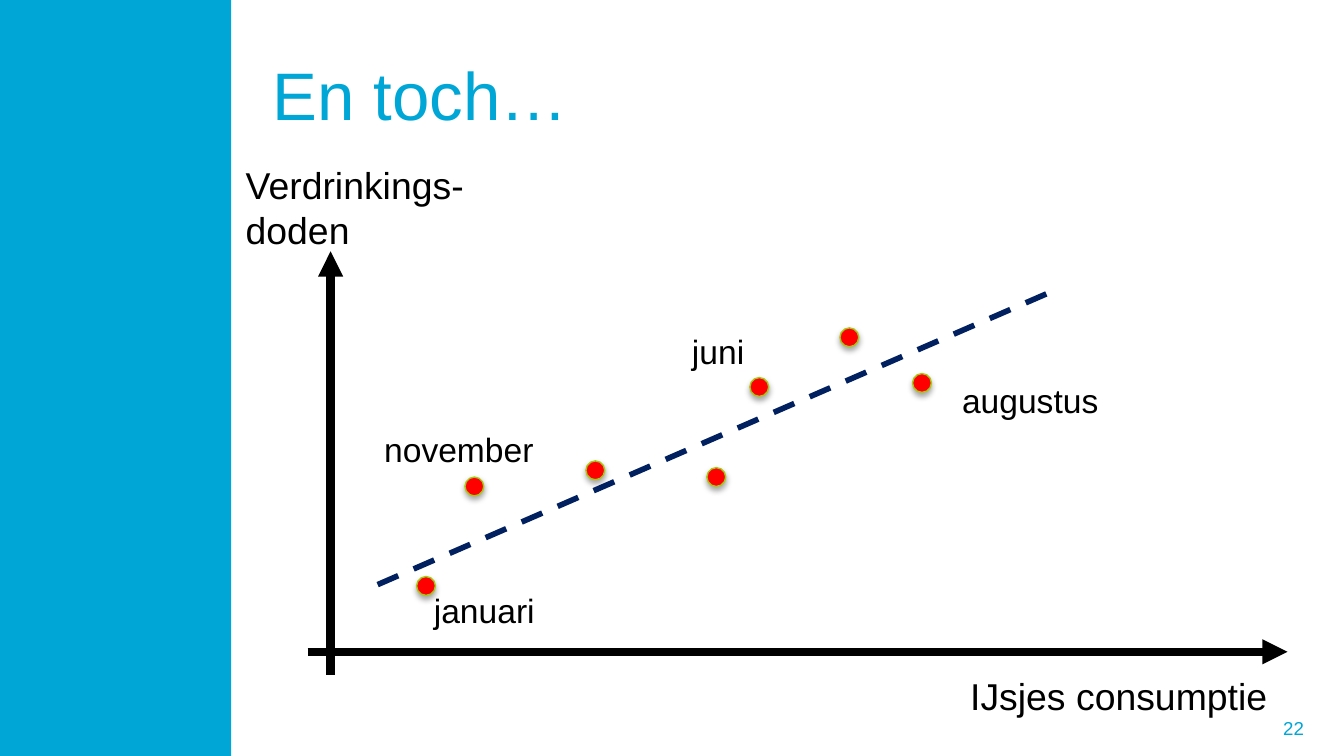
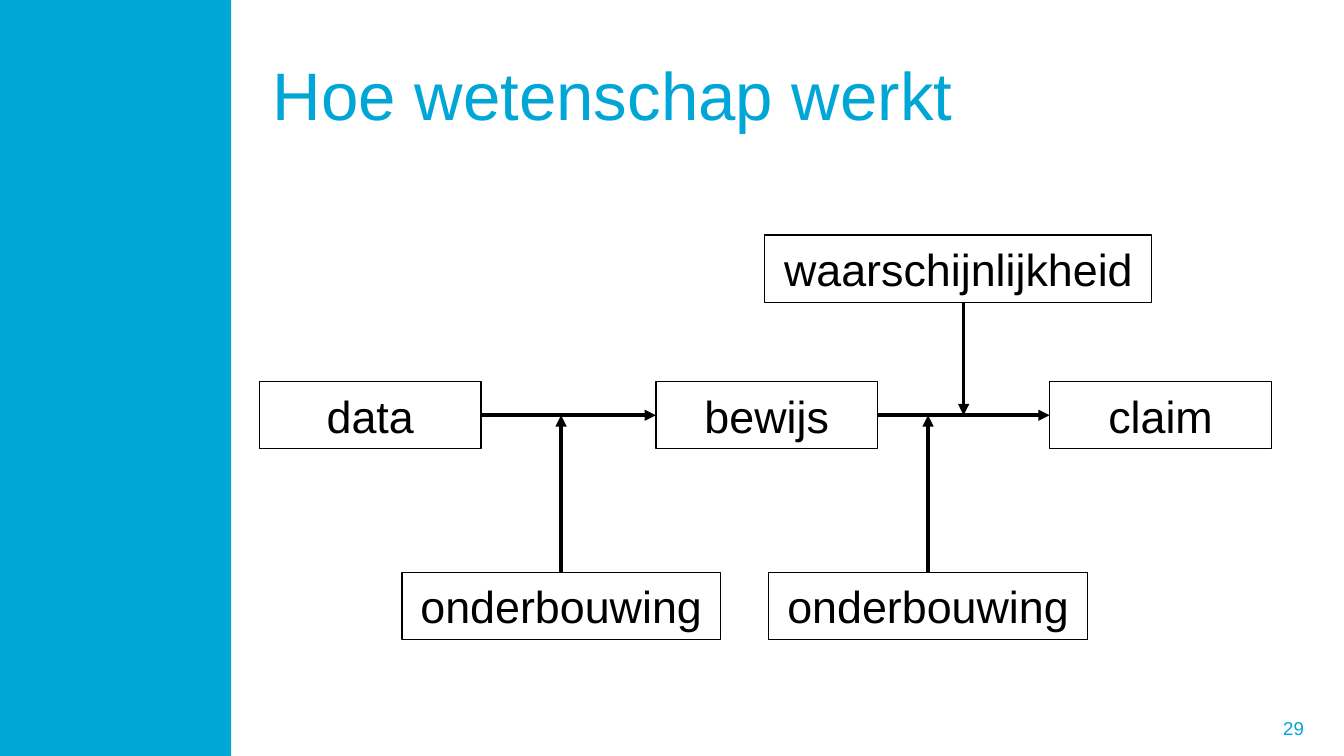
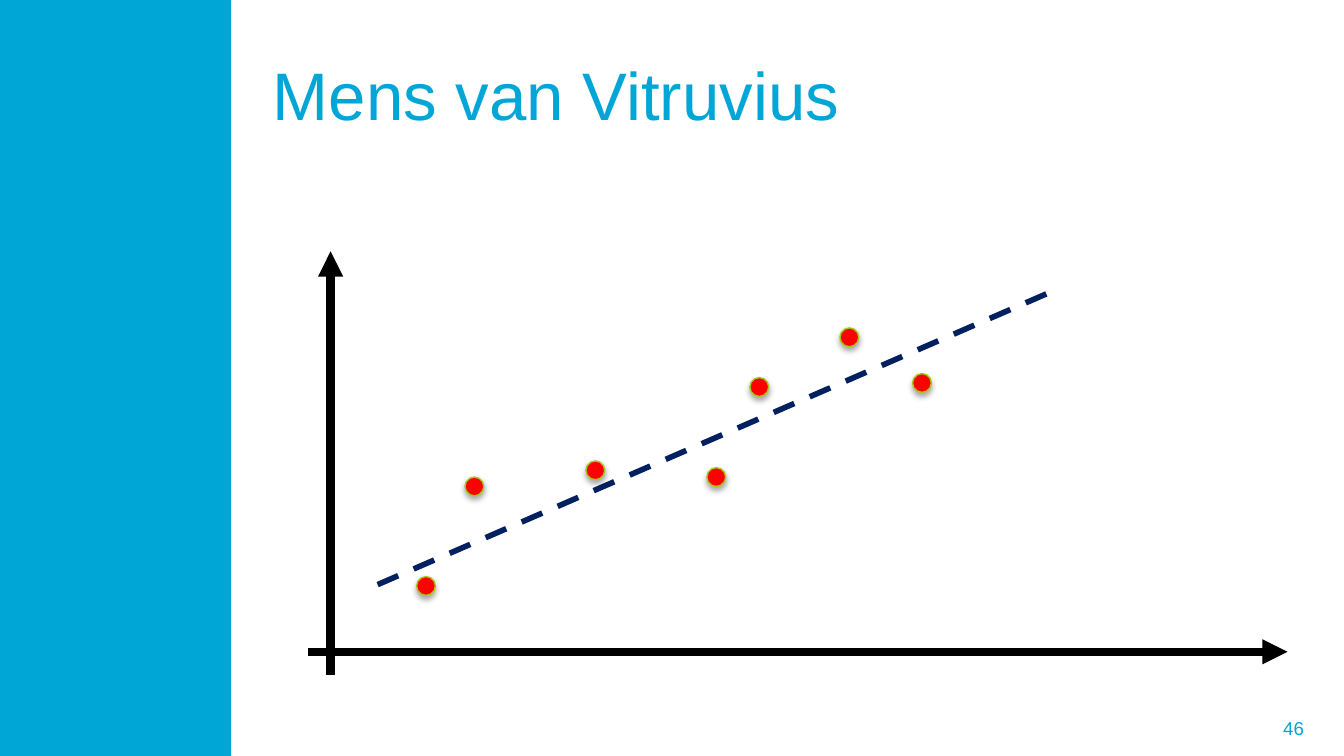
from lxml import etree
from pptx import Presentation
from pptx import util as u
from pptx.dml.color import RGBColor
from pptx.enum import dml, shapes, text
from pptx.oxml.ns import qn

FONT = "Arial"
CYAN, BLACK, RED, LIME, NAVY = "00A6D6", "000000", "FF0000", "A4CA15", "002060"

# Lengths are cells of a square grid: 100 columns by 56.25 rows
COLS, ROWS = 100, 56.25
CELL = u.Inches(10) / COLS


def grid(*cells):
    return [u.Emu(round(cell * CELL)) for cell in cells]


def hue(code):
    return RGBColor.from_string(code)


def sub(node, tag, **attrs):
    return etree.SubElement(node, qn(tag), attrs)


class Deck:
    def __init__(self):
        self.prs = Presentation()
        self.prs.slide_width, self.prs.slide_height = grid(COLS, ROWS)
        self.slide = None

    def page(self, title, number):
        """Start a slide with its band, title and number."""
        self.slide = self.prs.slides.add_slide(self.prs.slide_layouts[5])
        self.shape("RECTANGLE", (0, 0, 17.2, ROWS), fill=CYAN)
        head = self.slide.shapes.title
        head.left, head.top, head.width, head.height = grid(19.3, 2.3, 77.7, 9.4)
        self.style(head.text_frame, title, 36, CYAN, anchor="MIDDLE")
        self.label(number, (72.7, 52.7, 25.3, 3), 10, CYAN, "RIGHT", "MIDDLE")

    def style(self, frame, words, size, color=BLACK, align="LEFT", anchor="TOP"):
        frame.text = words
        frame.vertical_anchor = getattr(text.MSO_ANCHOR, anchor)
        for par in frame.paragraphs:
            par.alignment = getattr(text.PP_ALIGN, align)
            font = par.font
            font.name, font.size = FONT, u.Pt(size)
            font.color.rgb = hue(color)

    def label(self, words, area, size, color=BLACK, align="LEFT",
              anchor="TOP", wrap=True):
        frame = self.slide.shapes.add_textbox(*grid(*area)).text_frame
        frame.word_wrap = wrap
        self.style(frame, words, size, color, align, anchor)

    def shape(self, kind, area, fill=None, line=None):
        form = self.slide.shapes.add_shape(
            getattr(shapes.MSO_SHAPE, kind), *grid(*area))
        form.shadow.inherit = False
        if fill:
            form.fill.solid()
            form.fill.fore_color.rgb = hue(fill)
        else:
            form.fill.background()
        if line:
            form.line.color.rgb = hue(line)
            form.line.width = u.Pt(0.75)
        else:
            form.line.fill.background()
        return form

    def box(self, words, area):
        form = self.shape("RECTANGLE", area, line=BLACK)
        self.style(form.text_frame, words, 24, align="CENTER")
        return form

    def dot(self, left, top):
        form = self.shape("OVAL", (left, top, 1.4, 1.4), RED, LIME)
        glow = sub(form.element.spPr.find(qn("a:effectLst")), "a:outerShdw",
                   blurRad=str(u.Pt(3.1)), dist=str(u.Pt(1.8)),
                   dir="5400000", rotWithShape="0")
        sub(sub(glow, "a:srgbClr", val=BLACK), "a:alpha", val="35000")

    def line(self, ends, width, color=BLACK, dash=False, start=None, stop=None):
        """Draw a line; start and stop are (box, side) joints."""
        link = self.slide.shapes.add_connector(
            shapes.MSO_CONNECTOR.STRAIGHT, *grid(*ends))
        if start:
            link.begin_connect(*start)
        if stop:
            link.end_connect(*stop)
        link.line.color.rgb = hue(color)
        link.line.width = u.Pt(width)
        if dash:
            link.line.dash_style = dml.MSO_LINE.DASH
        else:
            sub(link.element.spPr.find(qn("a:ln")), "a:tailEnd", type="triangle")
        sub(link.element.spPr, "a:effectLst")

    def plot(self):
        """Draw the axes, the dots and the trend."""
        self.line((22.9, 48.5, 95.8, 48.5), 4.5)
        self.line((24.6, 50.2, 24.6, 18.7), 4.5)
        for spot in [(34.6, 35.5), (31, 42.9), (52.6, 34.8), (62.5, 24.4),
                     (67.9, 27.8), (43.6, 34.3), (55.8, 28.1)]:
            self.dot(*spot)
        self.line((28.1, 43.5, 78.7, 21.5), 3, NAVY, dash=True)


def main():
    deck = Deck()

    # Scatter with named axes and months
    deck.page("En toch…", "22")
    deck.plot()
    deck.label("IJsjes consumptie", (71.2, 49.6, 25.8, 4.4), 20)
    deck.label("Verdrinkings-\ndoden", (17.3, 11.6, 24.7, 7.7), 20)
    for month, left, top, width in [("juni", 50.5, 24.1, 5.9),
                                    ("augustus", 70.6, 27.8, 12.3),
                                    ("januari", 31.3, 43.4, 9.6),
                                    ("november", 27.6, 31.4, 13.2)]:
        deck.label(month, (left, top, width, 4), 18, wrap=False)

    # Chain from data to claim
    deck.page("Hoe wetenschap werkt", "29")
    mid, tall = 30.9, 5
    chain = [deck.box(word, (left, mid - tall / 2, 16.5, tall))
             for word, left in [("data", 19.3), ("bewijs", 48.8), ("claim", 78.1)]]
    for prior, after in zip(chain, chain[1:]):
        deck.line((0, mid, 0, mid), 2, start=(prior, 3), stop=(after, 1))

    # Support from below, chance from above
    for left in (29.9, 57.2):
        base = deck.box("onderbouwing", (left, 42.6, 23.7, tall))
        core = left + 23.7 / 2
        deck.line((core, 42.6, core, mid), 2, start=(base, 0))
    deck.box("waarschijnlijkheid", (56.9, 17.5, 28.8, tall))
    deck.line((71.7, 17.5 + tall, 71.7, mid), 2)

    # Bare scatter
    deck.page("Mens van Vitruvius", "46")
    deck.plot()

    deck.prs.save("out.pptx")


if __name__ == "__main__":
    main()
